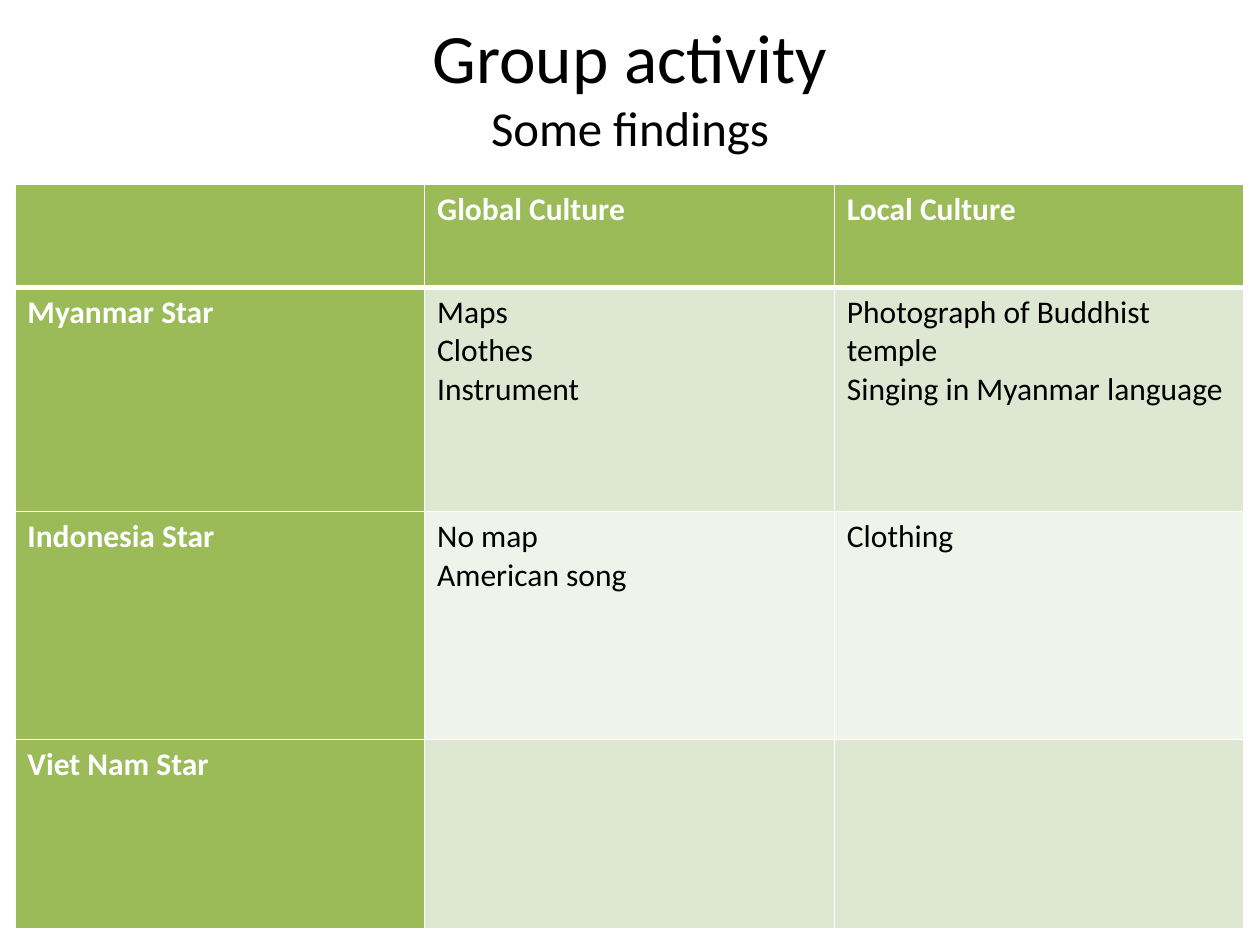
"""Build a slide comparing global and local culture in three singing contests."""
from dataclasses import dataclass

import lxml.etree
import pptx
import pptx.dml.color
import pptx.enum.text
import pptx.oxml.ns
import pptx.util

Cm, Pt = pptx.util.Cm, pptx.util.Pt
GREEN, PALE, PALER, WHITE, BLACK = "9BBB59", "DEE7D1", "EFF3EA", "FFFFFF", "000000"


@dataclass
class Row:
    height: float
    band: str
    cells: tuple[tuple[str, ...], ...]


ROWS = [
    Row(2.08, GREEN, ((), ("Global Culture",), ("Local Culture",))),
    Row(4.52, PALE, (("Myanmar Star",), ("Maps", "Clothes", "Instrument"),
                     ("Photograph of Buddhist temple", "Singing in Myanmar language"))),
    Row(4.6, PALER, (("Indonesia Star",), ("No map", "American song"), ("Clothing",))),
    Row(3.81, PALE, (("Viet Nam Star",), (), ())),
]


def rgb(color: str) -> pptx.dml.color.RGBColor:
    return pptx.dml.color.RGBColor.from_string(color)


def add_run(p, text: str, size: float, color: str, bold: bool = False) -> None:
    r = p.add_run()
    r.text = text
    for name, value in {"name": "Calibri", "size": Pt(size), "bold": bold}.items():
        setattr(r.font, name, value)
    r.font.color.rgb = rgb(color)


def set_borders(cell, widths: dict[str, float]) -> None:
    qn = pptx.oxml.ns.qn
    tc_pr = cell._tc.get_or_add_tcPr()
    for i, (side, width) in enumerate(widths.items()):
        ln = lxml.etree.Element(qn(f"a:ln{side}"), w=str(Pt(width)))
        fill = lxml.etree.SubElement(ln, qn("a:solidFill"))
        lxml.etree.SubElement(fill, qn("a:srgbClr"), val=WHITE)
        tc_pr.insert(i, ln)


def fill_cell(cell, lines: tuple[str, ...], header: bool, band: str) -> None:
    cell.fill.solid()
    cell.fill.fore_color.rgb = rgb(GREEN if header else band)
    tf = cell.text_frame
    for i, line in enumerate(lines):
        p = tf.add_paragraph() if i else tf.paragraphs[0]
        add_run(p, line, 18, WHITE if header else BLACK, header)


def add_title(s) -> None:
    sp = s.shapes.title
    box = {"left": 1.27, "top": 0.13, "width": 22.86, "height": 3.18}
    for name, value in box.items():
        setattr(sp, name, Cm(value))
    tf = sp.text_frame
    tf.vertical_anchor = pptx.enum.text.MSO_ANCHOR.MIDDLE
    p = tf.paragraphs[0]
    p.alignment = pptx.enum.text.PP_ALIGN.CENTER
    add_run(p, "Group activity", 39.6, BLACK)
    p.add_line_break()
    add_run(p, "Some findings", 27.9, BLACK)


def add_findings(s) -> None:
    columns = len(ROWS[0].cells)
    height = sum(row.height for row in ROWS)
    table = s.shapes.add_table(len(ROWS), columns, Cm(0.3), Cm(3.71),
                               Cm(8.26 * columns), Cm(height)).table
    for column in table.columns:
        column.width = Cm(8.26)
    for i, row in enumerate(ROWS):
        table.rows[i].height = Cm(row.height)
        for j, lines in enumerate(row.cells):
            cell = table.cell(i, j)
            fill_cell(cell, lines, i == 0 or j == 0, row.band)
            set_borders(cell, {"L": 1, "R": 1, "T": 3 if i == 1 else 1,
                               "B": 3 if i == 0 else 1})


def main() -> None:
    prs = pptx.Presentation()
    prs.slide_width, prs.slide_height = Cm(25.4), Cm(19.05)
    s = prs.slides.add_slide(prs.slide_layouts[5])
    add_title(s)
    add_findings(s)
    prs.save("out.pptx")


if __name__ == "__main__":
    main()
